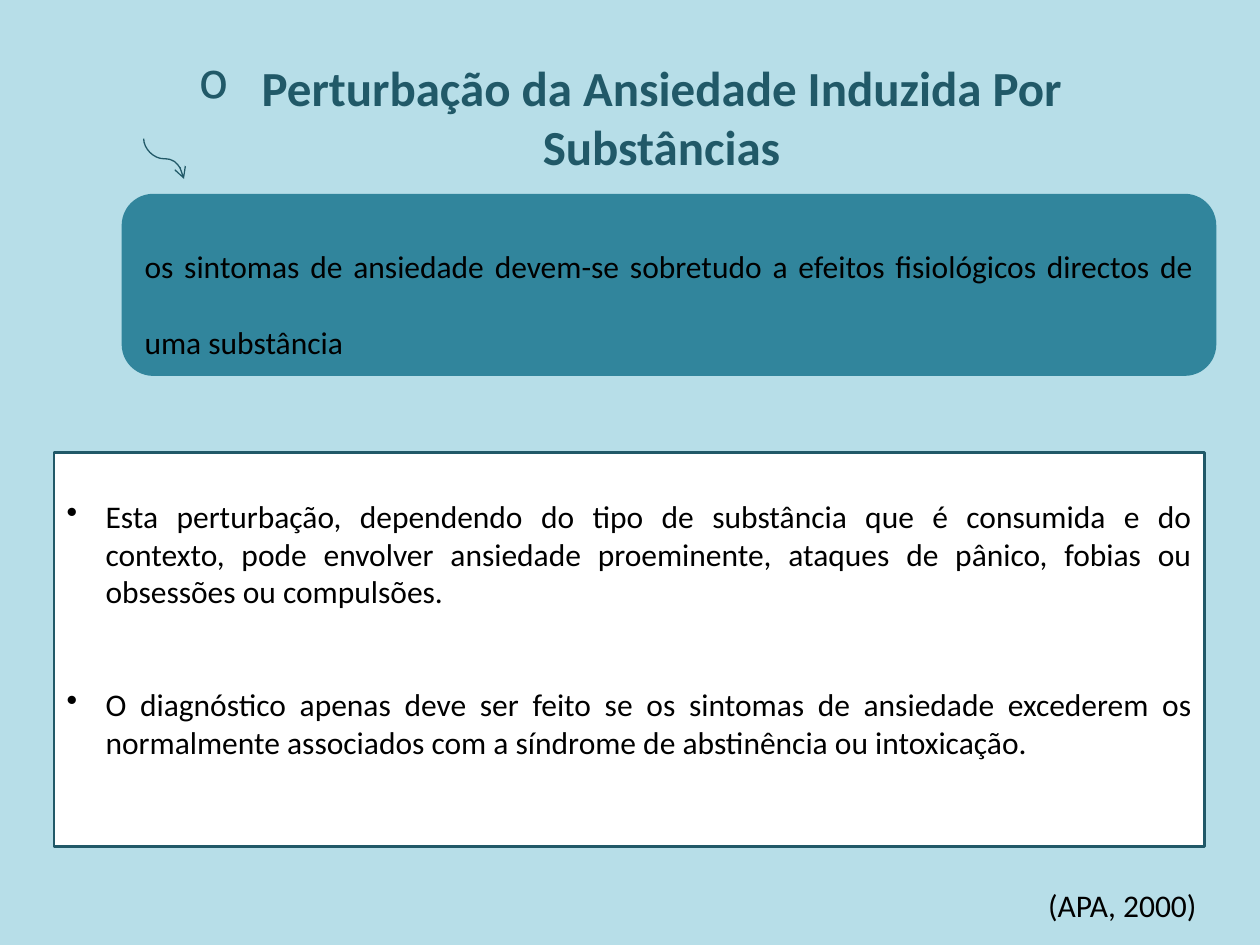
import dataclasses

import pptx
import pptx.dml.color
import pptx.enum.shapes
import pptx.enum.text
import pptx.oxml.ns
import pptx.util
from lxml import etree

SHAPES = pptx.enum.shapes.MSO_SHAPE
ALIGN = pptx.enum.text.PP_ALIGN
ANCHOR = pptx.enum.text.MSO_ANCHOR
qn = pptx.oxml.ns.qn
Inches = pptx.util.Inches
Pt = pptx.util.Pt
rgb = pptx.dml.color.RGBColor.from_string


@dataclasses.dataclass(frozen=True)
class Theme:
    font: str = "Calibri"
    background: str = "B7DEE8"
    dark: str = "215968"
    teal: str = "31859C"
    paper: str = "FFFFFF"
    ink: str = "000000"
    title_size: int = 28
    body_size: int = 18


THEME = Theme()
WIDTH, HEIGHT = 10, 7.5
HEADING = "Perturbação da Ansiedade Induzida Por Substâncias"
DEFINITION = (
    "os sintomas de ansiedade devem-se sobretudo a efeitos fisiológicos "
    "directos de uma substância"
)
CRITERIA = [
    "Esta perturbação, dependendo do tipo de substância que é consumida e do "
    "contexto, pode envolver ansiedade proeminente, ataques de pânico, fobias "
    "ou obsessões ou compulsões.",
    "O diagnóstico apenas deve ser feito se os sintomas de ansiedade excederem "
    "os normalmente associados com a síndrome de abstinência ou intoxicação.",
]
CITATION = "(APA, 2000)"


def share(left, top, width, height):
    return [
        Inches(part * side)
        for part, side in zip((left, top, width, height), (WIDTH, HEIGHT) * 2)
    ]


def apply_format(target, values):
    for name, value in values.items():
        setattr(target, name, value)


def write_text(frame, texts, frame_format, paragraph_format, size, color, bold=False):
    apply_format(frame, {"word_wrap": True, **frame_format})
    for index, text in enumerate(texts):
        paragraph = frame.paragraphs[0] if index == 0 else frame.add_paragraph()
        apply_format(paragraph, paragraph_format)
        run = paragraph.add_run()
        run.text = text
        apply_format(run.font, {"name": THEME.font, "size": Pt(size), "bold": bold})
        run.font.color.rgb = rgb(color)


def add_bullet(paragraph, mark, indent):
    properties = paragraph._p.get_or_add_pPr()
    properties.set("marL", str(Inches(indent)))
    properties.set("indent", str(-Inches(indent)))
    etree.SubElement(properties, qn("a:buChar"), char=mark)


def add_panel(slide, kind, box, fill, outline, weight):
    panel = slide.shapes.add_shape(kind, *share(*box))
    panel.shadow.inherit = False
    panel.fill.solid()
    panel.fill.fore_color.rgb = rgb(fill)
    panel.line.color.rgb = rgb(outline)
    panel.line.width = Pt(weight)
    return panel


def add_heading(slide):
    heading = slide.shapes.title
    left, top, width, height = share(0.05, 0.04, 0.9, 0.167)
    apply_format(heading, {"left": left, "top": top, "width": width, "height": height})
    write_text(
        heading.text_frame,
        [HEADING],
        {"vertical_anchor": ANCHOR.MIDDLE},
        {"alignment": ALIGN.CENTER},
        THEME.title_size,
        THEME.dark,
        bold=True,
    )
    add_bullet(heading.text_frame.paragraphs[0], "o", 0.5)


def add_curved_arrow(slide, left, top, side):
    arrow = slide.shapes.add_connector(
        pptx.enum.shapes.MSO_CONNECTOR.CURVE,
        *map(Inches, (left + side, top, left, top + side)),
    )
    arrow.line.color.rgb = rgb(THEME.dark)
    arrow.line.width = Pt(0.75)
    properties = arrow._element.spPr
    properties.find(qn("a:xfrm")).set("rot", str(270 * 60000))
    etree.SubElement(properties.find(qn("a:ln")), qn("a:tailEnd"), type="arrow")
    etree.SubElement(properties, qn("a:effectLst"))


def add_definition(slide):
    box = (0.098, 0.207, 0.866, 0.189)
    panel = add_panel(slide, SHAPES.ROUNDED_RECTANGLE, box, THEME.teal, THEME.teal, 2)
    write_text(
        panel.text_frame,
        [DEFINITION],
        {"vertical_anchor": ANCHOR.MIDDLE},
        {"alignment": ALIGN.JUSTIFY, "line_spacing": 2.0},
        THEME.body_size,
        THEME.ink,
    )


def add_criteria(slide):
    box = (0.043, 0.479, 0.913, 0.417)
    panel = add_panel(slide, SHAPES.RECTANGLE, box, THEME.paper, THEME.dark, 1.5)
    write_text(
        panel.text_frame,
        CRITERIA,
        {"vertical_anchor": ANCHOR.TOP, "margin_top": Inches(0.35)},
        {"alignment": ALIGN.JUSTIFY},
        THEME.body_size,
        THEME.ink,
    )
    for paragraph in panel.text_frame.paragraphs:
        add_bullet(paragraph, "•", 0.31)
    panel.text_frame.paragraphs[-1].space_before = Pt(43)


def add_citation(slide):
    citation = slide.shapes.add_textbox(*share(0.822, 0.931, 0.146, 0.053))
    write_text(
        citation.text_frame,
        [CITATION],
        {"word_wrap": False},
        {"alignment": ALIGN.LEFT},
        THEME.body_size,
        THEME.ink,
    )


def main():
    deck = pptx.Presentation()
    apply_format(deck, {"slide_width": Inches(WIDTH), "slide_height": Inches(HEIGHT)})
    slide = deck.slides.add_slide(deck.slide_layouts[5])
    slide.background.fill.solid()
    slide.background.fill.fore_color.rgb = rgb(THEME.background)
    add_heading(slide)
    add_curved_arrow(slide, 1.14, 1.1, 0.32)
    add_definition(slide)
    add_criteria(slide)
    add_citation(slide)
    deck.save("out.pptx")


if __name__ == "__main__":
    main()
